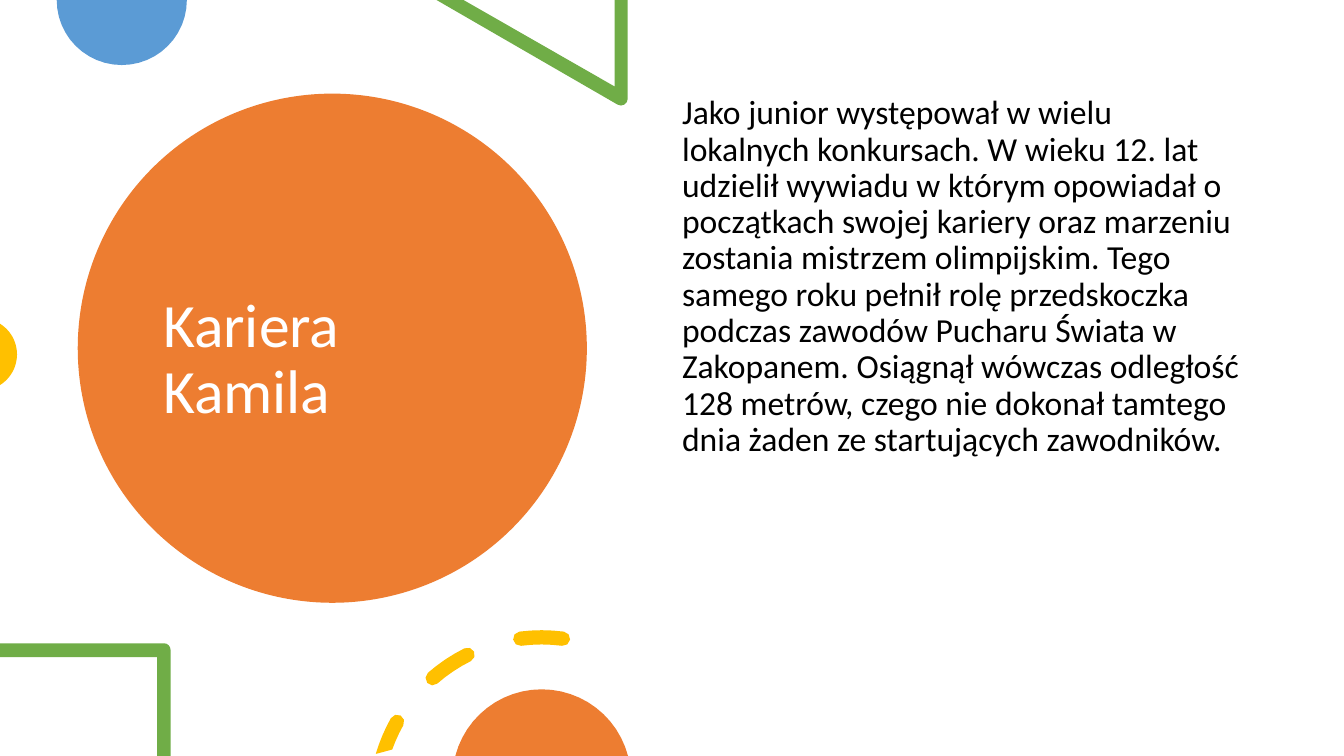
from math import cos, radians, sin

from pptx import Presentation
from pptx.dml.color import RGBColor
from pptx.enum.shapes import MSO_SHAPE
from pptx.enum.text import MSO_ANCHOR
from pptx.util import Cm, Pt

WHITE = RGBColor(0xFF, 0xFF, 0xFF)
BLACK = RGBColor(0x00, 0x00, 0x00)
ORANGE = RGBColor(0xED, 0x7D, 0x31)
BLUE = RGBColor(0x5B, 0x9B, 0xD5)
GREEN = RGBColor(0x70, 0xAD, 0x47)
YELLOW = RGBColor(0xFF, 0xC0, 0x00)

WIDTH, HEIGHT = 33.87, 19.05
CORNER = 0.17
RING_CENTER = (13.65, 20.24)
RING_RADIUS = 4.18
DASH_HALF = 0.18
DASH_ANGLES = [(-163.46, -150.6), (-131.1, -116.5), (-97.4, -82.6)]

CAREER = (
    "Jako junior występował w wielu lokalnych konkursach. W wieku 12. lat "
    "udzielił wywiadu w którym opowiadał o początkach swojej kariery oraz "
    "marzeniu zostania mistrzem olimpijskim. Tego samego roku pełnił rolę "
    "przedskoczka podczas zawodów Pucharu Świata w Zakopanem. Osiągnął "
    "wówczas odległość 128 metrów, czego nie dokonał tamtego dnia żaden ze "
    "startujących zawodników."
)


def arc(center, radius, start, end, steps=4):
    angles = [radians(start + (end - start) * step / steps) for step in range(steps + 1)]
    return [(center[0] + radius * cos(a), center[1] + radius * sin(a)) for a in angles]


def paint(shape, color):
    shape.shadow.inherit = False
    shape.fill.solid()
    shape.fill.fore_color.rgb = color
    shape.line.fill.background()


def add_outline(page, points, color):
    visible = [(Cm(max(x, 0)), Cm(y)) for x, y in points if y <= HEIGHT + 0.01]
    builder = page.shapes.build_freeform(*visible[0])
    builder.add_line_segments(visible[1:], close=True)
    paint(builder.convert_to_shape(), color)


def add_cut_circle(page, center, radius, start, end, color):
    add_outline(page, arc(center, radius, start, end, 24), color)


def add_dash(page, start, end):
    start_cap, end_cap = arc(RING_CENTER, RING_RADIUS, start, end, 1)
    points = arc(RING_CENTER, RING_RADIUS + DASH_HALF, start, end)
    points += arc(end_cap, DASH_HALF, end, end + 180)
    points += arc(RING_CENTER, RING_RADIUS - DASH_HALF, end, start)
    points += arc(start_cap, DASH_HALF, start + 180, start + 360)
    add_outline(page, points, YELLOW)


def add_text(page, frame, text, size, color, anchor):
    box = page.shapes.add_textbox(*map(Cm, frame))
    text_frame = box.text_frame
    text_frame.word_wrap = True
    text_frame.vertical_anchor = anchor
    text_frame.text = text
    para = text_frame.paragraphs[0]
    para.line_spacing = 0.9
    font = para.runs[0].font
    font.name = "Calibri"
    font.size = Pt(size)
    font.color.rgb = color


def main():
    deck = Presentation()
    deck.slide_width = Cm(WIDTH)
    deck.slide_height = Cm(HEIGHT)
    page = deck.slides.add_slide(deck.slide_layouts[6])

    disc = page.shapes.add_shape(
        MSO_SHAPE.OVAL, Cm(1.96), Cm(2.36), Cm(12.83), Cm(12.83)
    )
    paint(disc, ORANGE)
    add_text(page, (3.86, 3.43, 8.99, 11.3), "Kariera Kamila", 44, WHITE, MSO_ANCHOR.MIDDLE)

    add_cut_circle(page, (3.07, 0), 1.64, 0, 180, BLUE)
    triangle = [(15.82, 0), (15.49, 0), (15.49, 2.18), (11.68, 0), (11, 0)]
    add_outline(page, triangle + arc((15.65, 2.49), CORNER, 120, 0), GREEN)
    add_cut_circle(page, (-0.48, 8.93), 0.91, -58.2, 58.2, YELLOW)

    add_text(page, (16.94, 2.29, 14.6, 13.59), CAREER, 24, BLACK, MSO_ANCHOR.TOP)

    square = [(0, 16.21), (0, 16.56), (3.96, 16.56), (3.96, HEIGHT), (4.3, HEIGHT)]
    add_outline(page, square + arc((4.13, 16.38), CORNER, 0, -90), GREEN)
    for start, end in DASH_ANGLES:
        add_dash(page, start, end)
    add_cut_circle(page, (13.65, 19.62), 2.25, -165.3, -14.7, ORANGE)

    deck.save("out.pptx")


if __name__ == "__main__":
    main()
